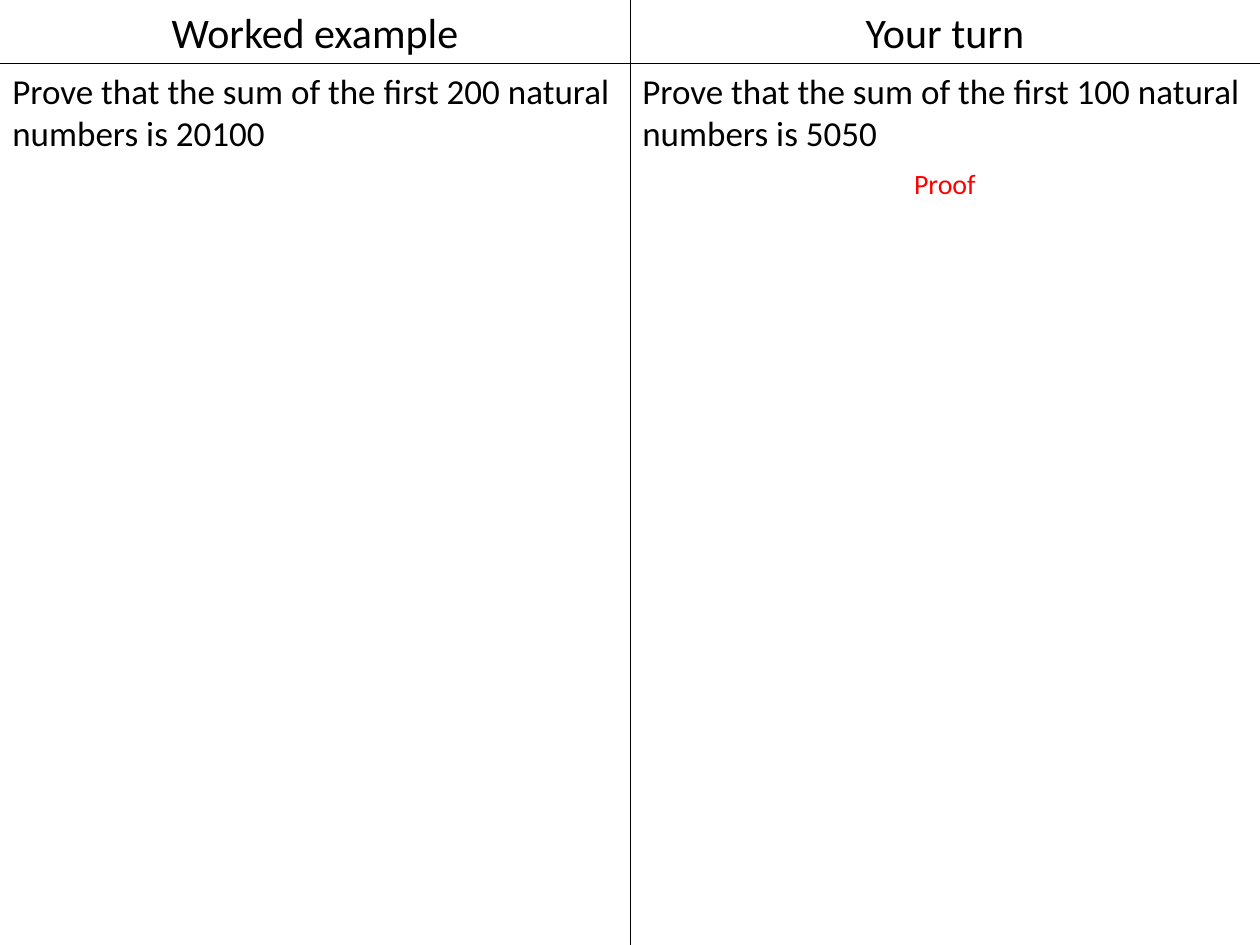
from lxml import etree
from pptx import Presentation
from pptx.dml.color import RGBColor
from pptx.enum import shapes, text
from pptx.oxml import ns
from pptx.util import Inches, Pt

BLACK, RED = "000000", "FF0000"
WIDTH, HEIGHT = 10, 7.5
COLUMN = WIDTH / 2
HEADING_HEIGHT, QUESTION_HEIGHT, ANSWER_HEIGHT = 0.5, 0.77, 0.37

columns = [
    {"heading": "Worked example",
     "question": "Prove that the sum of the first 200 natural numbers is 20100"},
    {"heading": "Your turn",
     "question": "Prove that the sum of the first 100 natural numbers is 5050",
     "answer": "Proof"},
]
rows = [
    ("heading", HEADING_HEIGHT, 24, BLACK, text.PP_ALIGN.CENTER),
    ("question", QUESTION_HEIGHT, 20, BLACK, text.PP_ALIGN.LEFT),
    ("answer", ANSWER_HEIGHT, 16, RED, text.PP_ALIGN.CENTER),
]
dividers = [
    (0, HEADING_HEIGHT, WIDTH, HEADING_HEIGHT),
    (COLUMN, 0, COLUMN, HEIGHT),
]


def color(value):
    return RGBColor.from_string(value)


def add_divider(slide, ends):
    divider = slide.shapes.add_connector(
        shapes.MSO_CONNECTOR.STRAIGHT, *(Inches(end) for end in ends))
    divider.line.color.rgb = color(BLACK)
    divider.line.width = Pt(0.5)
    etree.SubElement(divider._element.spPr, ns.qn("a:effectLst"))


def add_text(slide, words, left, top, height, size, ink, align):
    box = slide.shapes.add_textbox(
        Inches(left), Inches(top), Inches(COLUMN), Inches(height))
    frame = box.text_frame
    frame.word_wrap = True
    frame.auto_size = text.MSO_AUTO_SIZE.SHAPE_TO_FIT_TEXT
    paragraph = frame.paragraphs[0]
    paragraph.text = words
    paragraph.alignment = align
    paragraph.font.name = "Calibri"
    paragraph.font.size = Pt(size)
    paragraph.font.color.rgb = color(ink)


def main():
    deck = Presentation()
    deck.slide_width, deck.slide_height = Inches(WIDTH), Inches(HEIGHT)
    slide = deck.slides.add_slide(deck.slide_layouts[6])
    for ends in dividers:
        add_divider(slide, ends)
    top = 0
    for part, height, size, ink, align in rows:
        for index, column in enumerate(columns):
            if part in column:
                add_text(slide, column[part], index * COLUMN, top, height,
                         size, ink, align)
        top += height
    deck.save("out.pptx")


if __name__ == "__main__":
    main()
